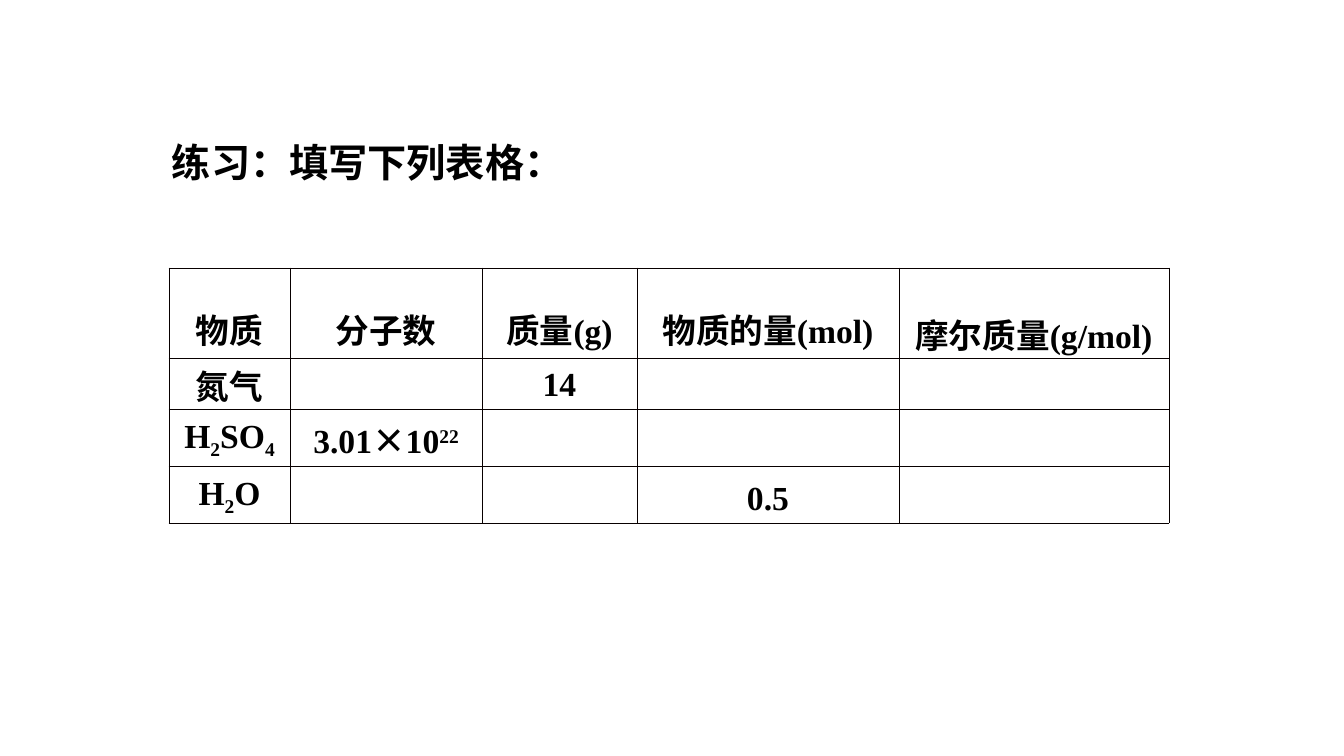
"""Build a slide with a fill-in exercise table on amount of substance."""
from lxml import etree
from pptx import Presentation, util as u
from pptx.dml.color import RGBColor
from pptx.enum import text
from pptx.oxml.ns import qn

TITLE = "练习：填写下列表格："
SUB, SUPER = -25000, 30000
ROWS = [
    [["物质"], ["分子数"], ["质量", "(g)"], ["物质的量", "(mol)"], ["摩尔质量", "(g/mol)"]],
    [["氮气"], [], ["14"], [], []],
    [["H", ("2", SUB), "SO", ("4", SUB)], ["3.01", "×", "10", ("22", SUPER)], [], [], []],
    [["H", ("2", SUB), "O"], [], [], ["0.5"], []],
]
COLUMN_WIDTHS = [121, 192, 155, 262, 270]
ROW_HEIGHTS = [90, 51, 57, 57]
TABLE_LEFT, TABLE_TOP = 169, 268
TITLE_BOX = (162, 138, 419, 57)
SIDE_INSET, BOTTOM_INSET = 13, 5
TIGHT_INSETS = {(0, 4): 0, (1, 0): 0, (2, 1): 3}

BLACK = RGBColor(0, 0, 0)
BORDER = RGBColor(8, 0, 0)
BORDER_WIDTH = u.Pt(0.5)
HAN_FONT, LATIN_FONT = "Noto Sans CJK SC", "Times New Roman"


def px(length):
    return round(length * 914400 / 100.8)


def apply(target, values):
    for name, value in values.items():
        setattr(target, name, value)


def add_span(para, words, size, baseline=0):
    span = para.add_run()
    span.text = words
    face = LATIN_FONT if words.isascii() else HAN_FONT
    apply(span.font, {"name": face, "size": u.Pt(size), "bold": True})
    span.font.color.rgb = BLACK
    properties = span.font._element
    etree.SubElement(properties, qn("a:ea"), typeface=face)
    if baseline:
        properties.set("baseline", str(baseline))


def add_borders(cell):
    properties = cell._tc.get_or_add_tcPr()
    for side in ("lnL", "lnR", "lnT", "lnB"):
        line = etree.SubElement(properties, qn(f"a:{side}"), w=str(BORDER_WIDTH))
        fill = etree.SubElement(line, qn("a:solidFill"))
        etree.SubElement(fill, qn("a:srgbClr"), val=str(BORDER))


def add_title(page):
    box = page.shapes.add_textbox(*map(px, TITLE_BOX))
    apply(box.text_frame, {"word_wrap": True, "margin_left": px(10),
                           "margin_right": px(10), "margin_top": 0, "margin_bottom": 0})
    add_span(box.text_frame.paragraphs[0], TITLE, 28)


def add_exercise_table(page):
    area = (TABLE_LEFT, TABLE_TOP, sum(COLUMN_WIDTHS), sum(ROW_HEIGHTS))
    table = page.shapes.add_table(len(ROWS), len(COLUMN_WIDTHS), *map(px, area)).table
    apply(table, {"first_row": False, "horz_banding": False})
    for column, width in zip(table.columns, COLUMN_WIDTHS):
        column.width = px(width)
    for row, height in zip(table.rows, ROW_HEIGHTS):
        row.height = px(height)
    for r, contents in enumerate(ROWS):
        for c, spans in enumerate(contents):
            cell = table.cell(r, c)
            apply(cell, {"vertical_anchor": text.MSO_ANCHOR.BOTTOM,
                         "margin_left": px(SIDE_INSET), "margin_right": px(SIDE_INSET),
                         "margin_top": 0,
                         "margin_bottom": px(TIGHT_INSETS.get((r, c), BOTTOM_INSET))})
            add_borders(cell)
            cell.fill.background()
            para = cell.text_frame.paragraphs[0]
            para.alignment = text.PP_ALIGN.CENTER
            for span in spans:
                words, baseline = (span, 0) if isinstance(span, str) else span
                add_span(para, words, 24, baseline)


def main():
    deck = Presentation()
    apply(deck, {"slide_width": px(1344), "slide_height": px(756)})
    page = deck.slides.add_slide(deck.slide_layouts[6])
    add_title(page)
    add_exercise_table(page)
    deck.save("out.pptx")


if __name__ == "__main__":
    main()
